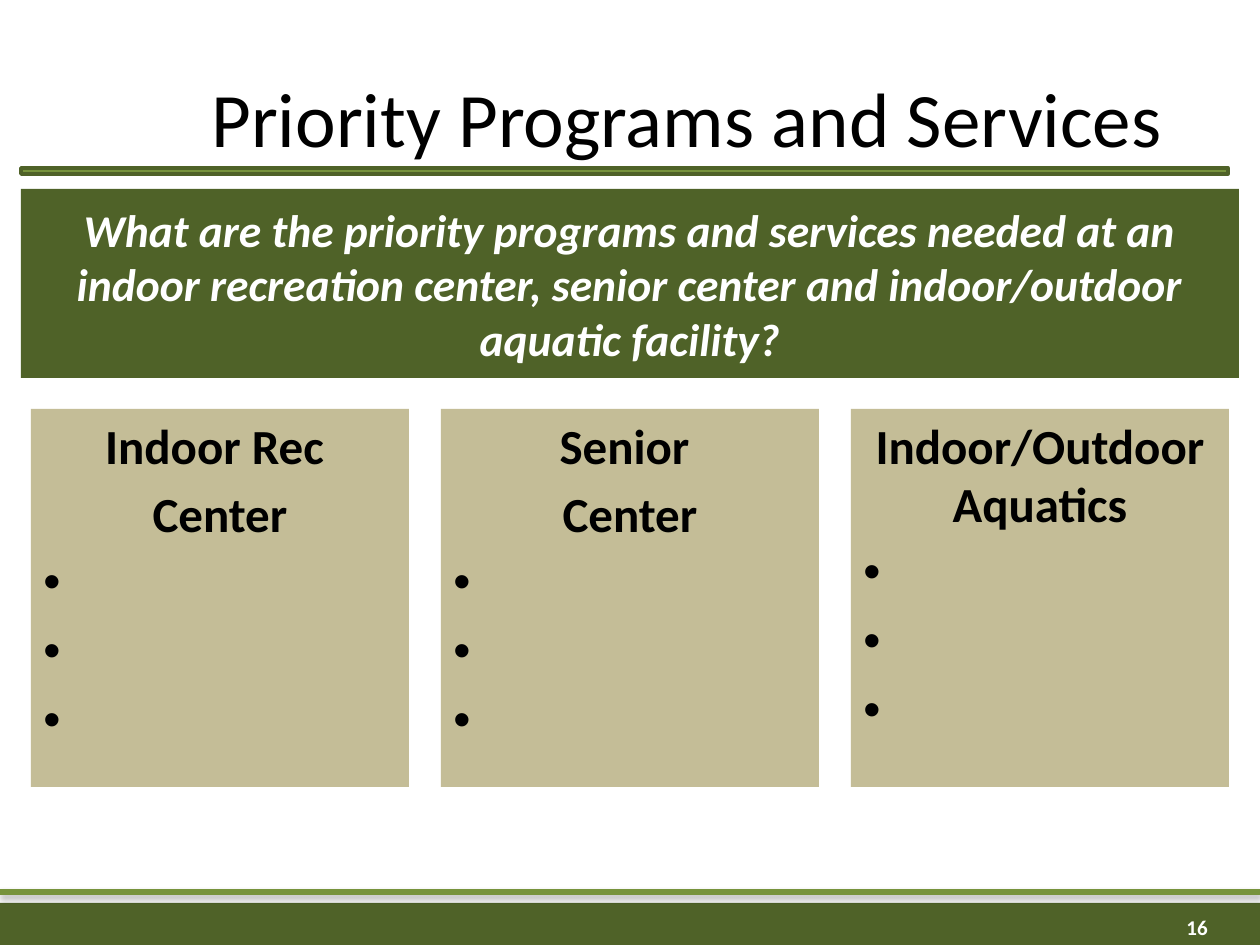
"""Build the priority programs and services slide."""
from lxml import etree
from pptx import Presentation
from pptx.dml.color import RGBColor
from pptx.enum.shapes import MSO_CONNECTOR, MSO_SHAPE
from pptx.enum.text import MSO_ANCHOR, PP_ALIGN
from pptx.oxml.ns import qn
from pptx.util import Pt

RECT = MSO_SHAPE.RECTANGLE
LINE = MSO_CONNECTOR.STRAIGHT
TOP, MIDDLE = MSO_ANCHOR.TOP, MSO_ANCHOR.MIDDLE
LEFT, CENTER, RIGHT = PP_ALIGN.LEFT, PP_ALIGN.CENTER, PP_ALIGN.RIGHT
BLACK = RGBColor(0x00, 0x00, 0x00)
WHITE = RGBColor(0xFF, 0xFF, 0xFF)
DARK = RGBColor(0x4F, 0x62, 0x28)
GREEN = RGBColor(0x77, 0x93, 0x3C)
TAN = RGBColor(0xC4, 0xBD, 0x97)
SCALE = 914400 / 126


def emu(px):
    """Turn px into EMU."""
    return round(px * SCALE)


class Deck:
    """Hold the style and the current slide."""

    def __init__(self, wide, high, font):
        """Start a deck with one blank slide."""
        self.show = Presentation()
        self.show.slide_width, self.show.slide_height = emu(wide), emu(high)
        self.font = font
        self.slide = self.show.slides.add_slide(self.show.slide_layouts[6])

    def rect(self, box, fill, edge=None):
        """Add a filled rectangle."""
        shape = self.slide.shapes.add_shape(RECT, *map(emu, box))
        shape.shadow.inherit = False
        shape.fill.solid()
        shape.fill.fore_color.rgb = fill
        if edge:
            shape.line.color.rgb = edge
            shape.line.width = Pt(2)
        else:
            shape.line.fill.background()
        return shape

    def rule(self, y, wide, color):
        """Add a level line with a soft shadow."""
        line = self.slide.shapes.add_connector(LINE, 0, emu(y), emu(wide), emu(y))
        line.line.color.rgb = color
        line.line.width = Pt(3)
        props = line._element.spPr
        group = etree.SubElement(props, qn("a:effectLst"))
        shade = etree.SubElement(group, qn("a:outerShdw"), blurRad="40000",
                                 dist="23000", dir="5400000", rotWithShape="0")
        tint = etree.SubElement(shade, qn("a:srgbClr"), val="000000")
        etree.SubElement(tint, qn("a:alpha"), val="35000")

    def label(self, box, text, size, color, align, bold=False):
        """Add a text box with one line of text."""
        shape = self.slide.shapes.add_textbox(*map(emu, box))
        self.words(shape, text, size, color, align, bold)

    def words(self, shape, text, size, color, align, bold=False, slant=False):
        """Put one paragraph at mid height in a shape."""
        frame = shape.text_frame
        frame.word_wrap = True
        frame.vertical_anchor = MIDDLE
        para = frame.paragraphs[0]
        para.alignment = align
        self.run(para, text, size, color, bold, slant)

    def run(self, para, text, size, color, bold=False, slant=False):
        """Add one styled run."""
        run = para.add_run()
        run.text = text
        font = run.font
        font.name, font.size = self.font, Pt(size)
        font.bold, font.italic = bold, slant
        font.color.rgb = color

    def card(self, box, heads, count):
        """Add a card with heading lines and open bullets."""
        frame = self.rect(box, TAN).text_frame
        frame.word_wrap = True
        frame.vertical_anchor = TOP
        lines = [(head, True) for head in heads] + [(" ", False)] * count
        for i, (text, head) in enumerate(lines):
            para = frame.add_paragraph() if i else frame.paragraphs[0]
            para.alignment = CENTER if head else LEFT
            if not head:
                self.bullet(para)
            if i:
                para.space_before = Pt(5.6)
            self.run(para, text, 28, BLACK, head)

    def bullet(self, para):
        """Give a paragraph a hanging bullet."""
        props = para._p.get_or_add_pPr()
        props.set("marL", str(emu(47)))
        props.set("indent", str(-emu(47)))
        etree.SubElement(props, qn("a:buFont"), typeface="Arial")
        etree.SubElement(props, qn("a:buChar"), char="•")


def main():
    """Draw the slide and save it."""
    deck = Deck(1260, 945, "Calibri")
    deck.rect((0, 903, 1260, 42), DARK)
    deck.rect((21, 168, 1207, 6), GREEN, DARK)
    deck.rule(892, 1260, GREEN)
    deck.label((199, 38, 1029, 157), "Priority Programs and Services", 44, BLACK, LEFT)
    deck.label((926, 902, 294, 50), "16", 12, WHITE, RIGHT, True)
    banner = deck.rect((21, 189, 1218, 189), DARK)
    deck.words(banner, "What are the priority programs and services needed at an "
               "indoor recreation center, senior center and indoor/outdoor "
               "aquatic facility?", 26, WHITE, CENTER, True, True)
    cards = [("Indoor Rec ", "Center"), ("Senior ", "Center"),
             ("Indoor/Outdoor Aquatics",)]
    side, gap = 378, 32
    for i, heads in enumerate(cards):
        deck.card((31 + i * (side + gap), 409, side, side), heads, 3)
    deck.show.save("out.pptx")


if __name__ == "__main__":
    main()
